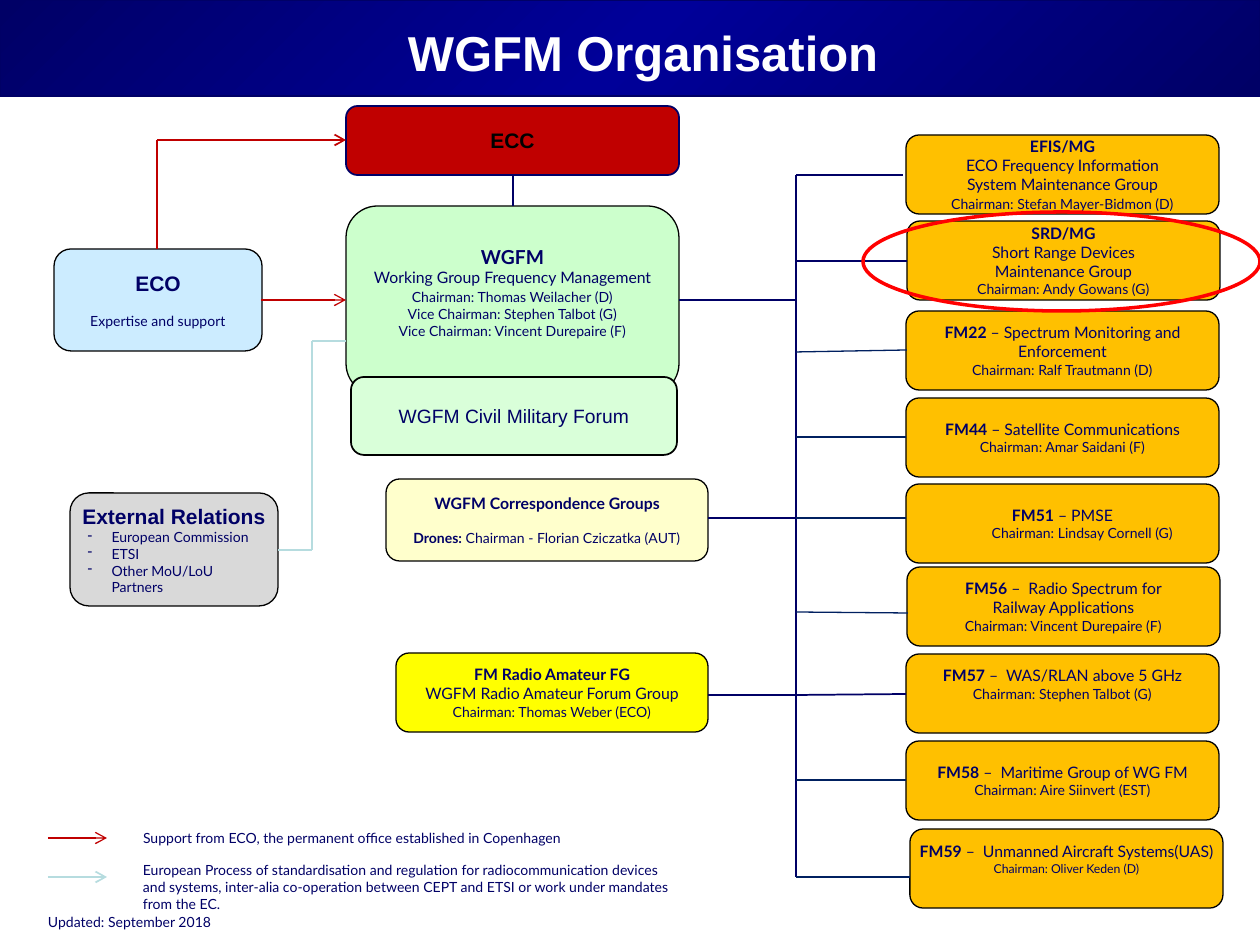
from copy import deepcopy
from itertools import pairwise

from lxml import etree
from pptx import Presentation
from pptx import util as u
from pptx.dml.color import RGBColor
from pptx.enum import shapes, text
from pptx.oxml.ns import qn

PX = 914400 / 126


class Theme:
    head, body = "Arial", "Lato"
    title, large, medium, normal, small, tiny = 28, 12, 11, 9, 8, 7
    navy, royal, spoke, black, white = "000066", "000099", "002060", "000000", "FFFFFF"
    red, oval, teal = "C00000", "FF0000", "B6DCDF"
    blue, grey, green, mint = "CCECFF", "D9D9D9", "CCFFCC", "D9FFD9"
    cream, yellow, amber = "FFFFCC", "FFFF00", "FFC000"


T = Theme


def line(bold="", plain="", size=T.normal, font=T.body, color=T.navy,
         before=0, indent=0, bullet=False):
    return dict(bold=bold, plain=plain, size=size, font=font, color=color,
                before=before, indent=indent, bullet=bullet)


def chair(name, size=T.small, role="Chairman", **extra):
    return line(plain=f"{role}: {name}", size=size, **extra)


# Boxes: left, top, width, height, fill, line width, extra bottom inset, lines
BOXES = [
    (346, 106, 333, 69, T.red, 1, 0, [line("ECC", size=T.large, font=T.head, color=T.black)]),
    (54, 249, 208, 102, T.blue, 0.75, 0, [
        line("ECO", size=T.large, font=T.head),
        line(plain="Expertise and support", size=T.small, before=10)]),
    (346, 206, 333, 189, T.green, 0.75, 17, [
        line("WGFM", size=T.medium),
        line(plain="Working Group Frequency Management"),
        chair("Thomas Weilacher (D)", before=1),
        chair("Stephen Talbot (G)", role="Vice Chairman"),
        chair("Vincent Durepaire (F)", role="Vice Chairman")]),
    (70, 493, 208, 113, T.grey, 0.75, 0, [
        line("External Relations", size=T.large, font=T.head)] + [
        line(plain=name, size=T.small, indent=32, bullet=True)
        for name in ("European Commission", "ETSI", "Other MoU/LoU Partners")]),
    (351, 377, 326, 78, T.mint, 1, 0, [
        line(plain="WGFM Civil Military Forum", size=T.medium, font=T.head)]),
    (386, 479, 322, 82, T.cream, 0.75, 0, [
        line("WGFM Correspondence Groups"),
        line("Drones: ", "Chairman - Florian Cziczatka (AUT)", T.small, before=10)]),
    (396, 653, 312, 79, T.yellow, 0.75, 0, [
        line("FM Radio Amateur FG"), line(plain="WGFM Radio Amateur Forum Group"),
        chair("Thomas Weber (ECO)")]),
]

# Groups on the right: left, top, extra bottom inset, lines
GROUPS = [
    (906, 135, 0, [line("EFIS/MG"), line(plain="ECO Frequency Information"),
                   line(plain="System Maintenance Group"),
                   chair("Stefan Mayer-Bidmon (D)", before=1)]),
    (907, 221, 0, [line("SRD/MG"), line(plain="Short Range Devices"),
                   line(plain="Maintenance Group"), chair("Andy Gowans (G)")]),
    (906, 311, 0, [line("FM22", " – Spectrum Monitoring and"), line(plain="Enforcement"),
                   chair("Ralf Trautmann (D)")]),
    (906, 398, 0, [line("FM44", " – Satellite Communications"), chair("Amar Saidani (F)")]),
    (906, 484, 0, [line("FM51", " – PMSE"), chair("Lindsay Cornell (G)", indent=40)]),
    (907, 567, 0, [line("FM56", " –  Radio Spectrum for"), line(plain="Railway Applications"),
                   chair("Vincent Durepaire (F)")]),
    (906, 654, 19, [line("FM57", " –  WAS/RLAN above 5 GHz"), chair("Stephen Talbot (G)")]),
    (906, 741, 0, [line("FM58", " –  Maritime Group of WG FM"), chair("Aire Siinvert (EST)")]),
    (910, 829, 19, [line("FM59", " –  Unmanned Aircraft Systems(UAS)"),
                    chair("Oliver Keden (D)", T.tiny)]),
]
BOXES += [(left, top, 313, 79, T.amber, 0.75, inset, lines)
          for left, top, inset, lines in GROUPS]

# Notes: left, top, width, height, lines
NOTES = [
    (35, 908, 199, 30, ["Updated: September 2018"]),
    (130, 823, 559, 29, ["Support from ECO, the permanent office established in Copenhagen"]),
    (130, 856, 590, 64, [
        "European Process of standardisation and regulation for radiocommunication devices",
        "and systems, inter-alia co-operation between CEPT and ETSI or work under mandates",
        "from the EC."]),
]

# Routes: points, colour, line width, arrow at the end
TRUNK = 796
ROUTES = [
    ([(48, 838), (107, 838)], T.red, 0.75, True),
    ([(48, 877), (107, 877)], T.teal, 1, True),
    ([(261, 300), (346, 300)], T.red, 0.75, True),
    ([(157, 249), (157, 140), (346, 140)], T.red, 1, True),
    ([(278, 550), (312, 550), (312, 341), (346, 341)], T.teal, 1, False),
    ([(513, 175), (513, 206)], T.navy, 1, False),
    ([(679, 300), (TRUNK, 300), (TRUNK, 877)], T.navy, 1, False),
    ([(903, 175), (TRUNK, 175), (TRUNK, 300)], T.navy, 0.75, False),
    ([(907, 261), (TRUNK, 261), (TRUNK, 300)], T.navy, 0.75, False),
    ([(708, 518), (TRUNK, 518)], T.navy, 1, False),
    ([(708, 695), (TRUNK, 695), (906, 694)], T.navy, 1, False),
] + [([(TRUNK, start), (right, end)], T.spoke, 0.75, False) for start, right, end in
     [(352, 907, 350), (437, 906, 437), (518, 906, 518),
      (612, 908, 613), (780, 906, 780), (877, 910, 877)]]


def px(*values):
    return [u.Emu(round(value * PX)) for value in values]


def rgb(color):
    return RGBColor.from_string(color)


def write(shape, lines, align, anchor, insets):
    frame = shape.text_frame
    frame.word_wrap = True
    frame.vertical_anchor = anchor
    (frame.margin_left, frame.margin_top,
     frame.margin_right, frame.margin_bottom) = px(*insets)
    for number, item in enumerate(lines):
        para = frame.paragraphs[0] if number == 0 else frame.add_paragraph()
        para.alignment = text.PP_ALIGN.LEFT if item["bullet"] else align
        para.space_before = u.Pt(item["before"])
        props = para._p.get_or_add_pPr()
        if item["indent"]:
            props.set("marL", str(px(item["indent"])[0]))
        if item["bullet"]:
            props.set("indent", str(px(-24)[0]))
            etree.SubElement(props, qn("a:buChar")).set("char", "-")
        font = para.font
        font.name, font.size = item["font"], u.Pt(item["size"])
        font.color.rgb = rgb(item["color"])
        parts = [(item[key], key == "bold") for key in ("bold", "plain") if item[key]]
        for words, bold in parts:
            span = para.add_run()
            span.text = words
            if len(parts) > 1:
                span.font.bold = bold
            else:
                font.bold = bold


def add_shape(page, kind, bounds, fill, outline, width):
    shape = page.shapes.add_shape(kind, *px(*bounds))
    shape.shadow.inherit = False
    if fill:
        shape.fill.solid()
        shape.fill.fore_color.rgb = rgb(fill)
    else:
        shape.fill.background()
    shape.line.color.rgb, shape.line.width = rgb(outline), u.Pt(width)
    return shape


def add_note(page, bounds, lines, align=text.PP_ALIGN.LEFT):
    box = page.shapes.add_textbox(*px(*bounds))
    write(box, lines, align, text.MSO_ANCHOR.TOP, (13, 6, 13, 6))


def add_route(page, points, color, width, arrow):
    for start, end in pairwise(points):
        segment = page.shapes.add_connector(shapes.MSO_CONNECTOR.STRAIGHT, *px(*start, *end))
        segment.line.color.rgb, segment.line.width = rgb(color), u.Pt(width)
        etree.SubElement(segment._element.spPr, qn("a:effectLst"))
    if arrow:
        etree.SubElement(segment.line._get_or_add_ln(), qn("a:tailEnd")).set("type", "arrow")


def add_banner(page):
    band = add_shape(page, shapes.MSO_SHAPE.RECTANGLE, (0, 0, 1260, 96), T.navy, T.navy, 0.75)
    band.fill.gradient()
    band.fill.gradient_angle = 315
    stops = band._element.spPr.find(".//" + qn("a:gsLst"))
    stops.append(deepcopy(stops[0]))
    for stop, place, color in zip(band.fill.gradient_stops, (0, 0.5, 1),
                                  (T.navy, T.royal, T.navy)):
        stop.position, stop.color.rgb = place, rgb(color)
    add_note(page, (383, 16, 520, 72),
             [line("WGFM Organisation", size=T.title, font=T.head, color=T.white)],
             text.PP_ALIGN.CENTER)


def main():
    deck = Presentation()
    deck.slide_width, deck.slide_height = px(1260, 945)
    page = deck.slides.add_slide(deck.slide_layouts[6])

    add_banner(page)
    for *bounds, fill, width, inset, lines in BOXES:
        outline = T.navy if fill == T.red else T.black
        box = add_shape(page, shapes.MSO_SHAPE.ROUNDED_RECTANGLE, bounds, fill, outline, width)
        write(box, lines, text.PP_ALIGN.CENTER, text.MSO_ANCHOR.MIDDLE, (4, 0, 4, inset))
    for *bounds, lines in NOTES:
        add_note(page, bounds, [line(plain=words, size=T.small) for words in lines])
    for route in ROUTES:
        add_route(page, *route)

    # Highlight around SRD/MG
    add_shape(page, shapes.MSO_SHAPE.OVAL, (863, 212, 397, 99), None, T.oval, 2)
    deck.save("out.pptx")


if __name__ == "__main__":
    main()
